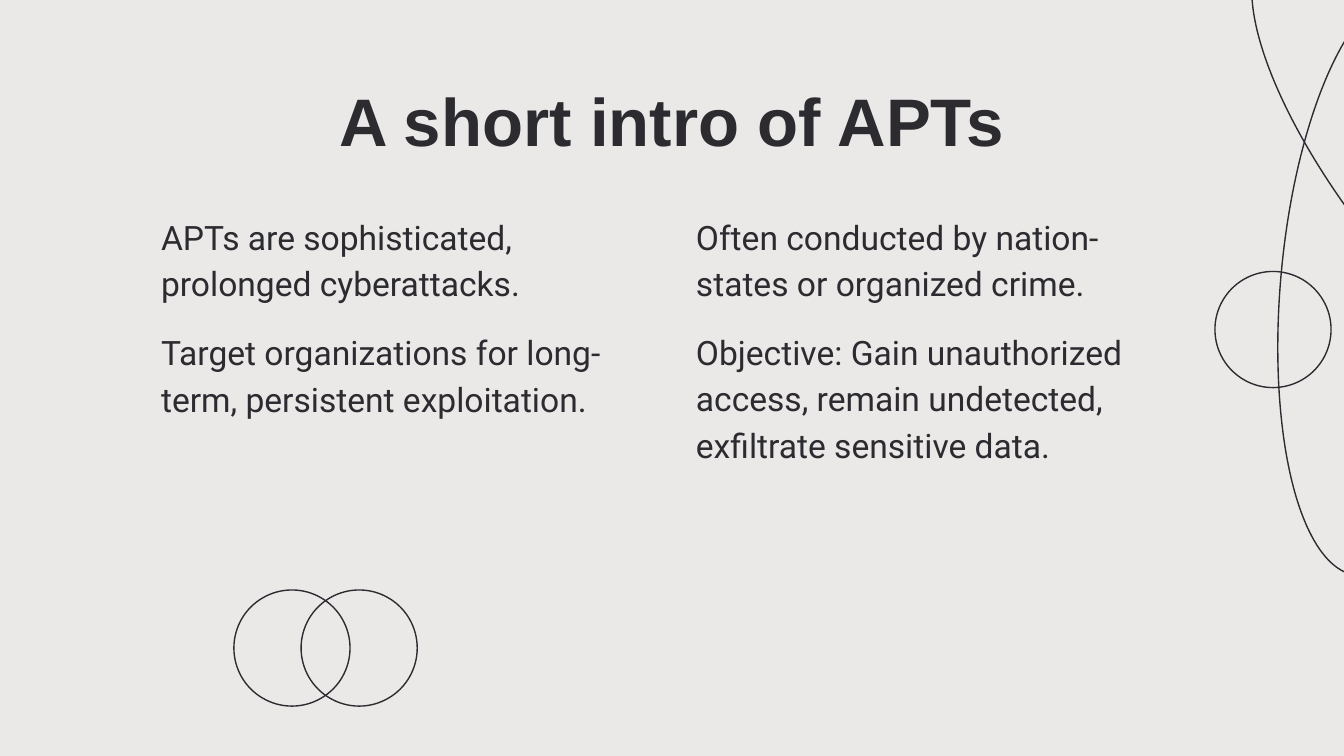
import dataclasses

import pptx
import pptx.dml.color
import pptx.enum.shapes
import pptx.enum.text
import pptx.util


@dataclasses.dataclass(frozen=True)
class Theme:
    ink: str = "2B2B30"
    paper: str = "EBE8E8"
    title_font: str = "Arial"
    body_font: str = "Roboto"
    title_size: int = 36
    body_size: int = 18
    outline: float = 0.75


THEME = Theme()
WIDTH = pptx.util.Inches(10)
HEIGHT = WIDTH * 9 // 16
INK = pptx.dml.color.RGBColor.from_string(THEME.ink)

TITLE_AREA = (7.8, 8.71, 84.4, 11.2)
BODY_TOP = 26.13
COLUMNS = [
    ((11, BODY_TOP, 34.8, 48.89), [
        "APTs are sophisticated, prolonged cyberattacks.",
        "Target organizations for long-term, persistent exploitation.",
    ]),
    ((50.8, BODY_TOP, 38.2, 59.02), [
        "Often conducted by nation-states or organized crime.",
        "Objective: Gain unauthorized access, remain undetected, "
        "exfiltrate sensitive data.",
    ]),
]

CIRCLE = (8.64, 15.36)
OVAL = (15.3, 77.69)
RING_PAIR = [((17.4 + 5 * step, 78.04, *CIRCLE), 0) for step in range(2)]
ORBITS = [
    ((95.3, -1.42, *OVAL), 5.2),
    ((100.3, -15.64, *OVAL), 321.7),
    ((90.4, 35.91, *CIRCLE), 310.8),
]

TITLE_FORMAT = {"alignment": pptx.enum.text.PP_ALIGN.CENTER}
BODY_FORMAT = {
    "alignment": pptx.enum.text.PP_ALIGN.LEFT,
    "line_spacing": 1.15,
    "space_after": pptx.util.Pt(12),
}
TITLE_TYPE = {
    "name": THEME.title_font,
    "size": pptx.util.Pt(THEME.title_size),
    "bold": True,
}
BODY_TYPE = {
    "name": THEME.body_font,
    "size": pptx.util.Pt(THEME.body_size),
}
INSET = pptx.util.Inches(0.1)
FRAME_FORMAT = {
    "word_wrap": True,
    "vertical_anchor": pptx.enum.text.MSO_ANCHOR.TOP,
    "margin_left": INSET,
    "margin_right": INSET,
    "margin_top": INSET,
    "margin_bottom": INSET,
}


def apply_format(target, values):
    for attribute, value in values.items():
        setattr(target, attribute, value)


def place(area):
    left, top, width, height = (share / 100 for share in area)
    return (round(left * WIDTH), round(top * HEIGHT),
            round(width * WIDTH), round(height * HEIGHT))


def add_text(slide, area, wording, paragraph_format, type_format):
    frame = slide.shapes.add_textbox(*place(area)).text_frame
    apply_format(frame, FRAME_FORMAT)
    frame.text = "\n".join(wording)
    for paragraph in frame.paragraphs:
        apply_format(paragraph, paragraph_format)
        for run in paragraph.runs:
            apply_format(run.font, type_format)
            run.font.color.rgb = INK


def add_rings(slide, rings):
    cluster = slide.shapes.add_group_shape()
    for area, angle in rings:
        ring = cluster.shapes.add_shape(
            pptx.enum.shapes.MSO_SHAPE.OVAL, *place(area))
        ring.rotation = angle
        ring.shadow.inherit = False
        ring.fill.background()
        ring.line.color.rgb = INK
        ring.line.width = pptx.util.Pt(THEME.outline)


def main():
    deck = pptx.Presentation()
    apply_format(deck, {"slide_width": WIDTH, "slide_height": HEIGHT})
    slide = deck.slides.add_slide(deck.slide_layouts[6])
    backdrop = slide.background.fill
    backdrop.solid()
    backdrop.fore_color.rgb = pptx.dml.color.RGBColor.from_string(THEME.paper)

    add_text(slide, TITLE_AREA, ["A short intro of APTs"],
             TITLE_FORMAT, TITLE_TYPE)
    for area, statements in COLUMNS:
        add_text(slide, area, statements, BODY_FORMAT, BODY_TYPE)
    for rings in (RING_PAIR, ORBITS):
        add_rings(slide, rings)
    deck.save("out.pptx")


if __name__ == "__main__":
    main()
